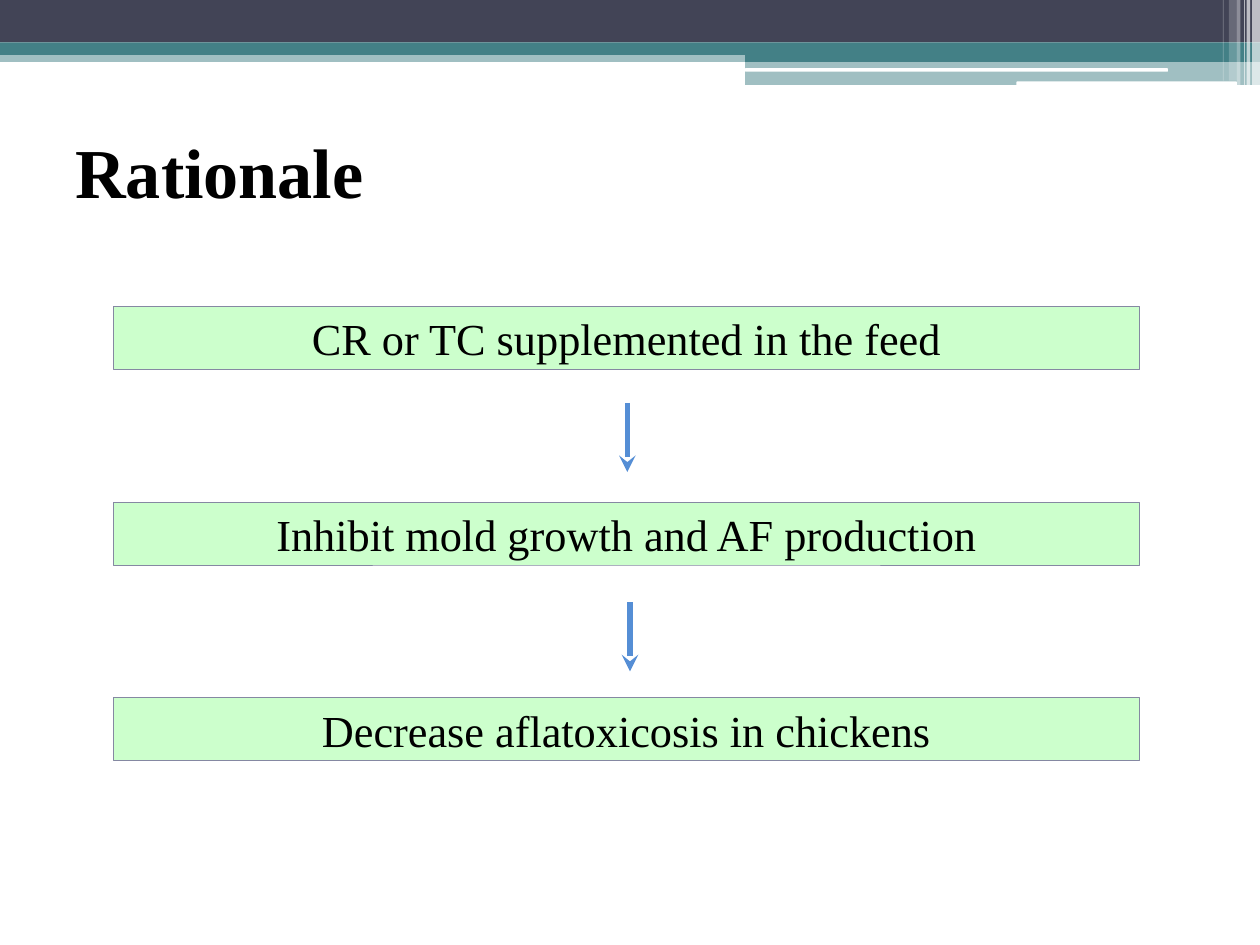
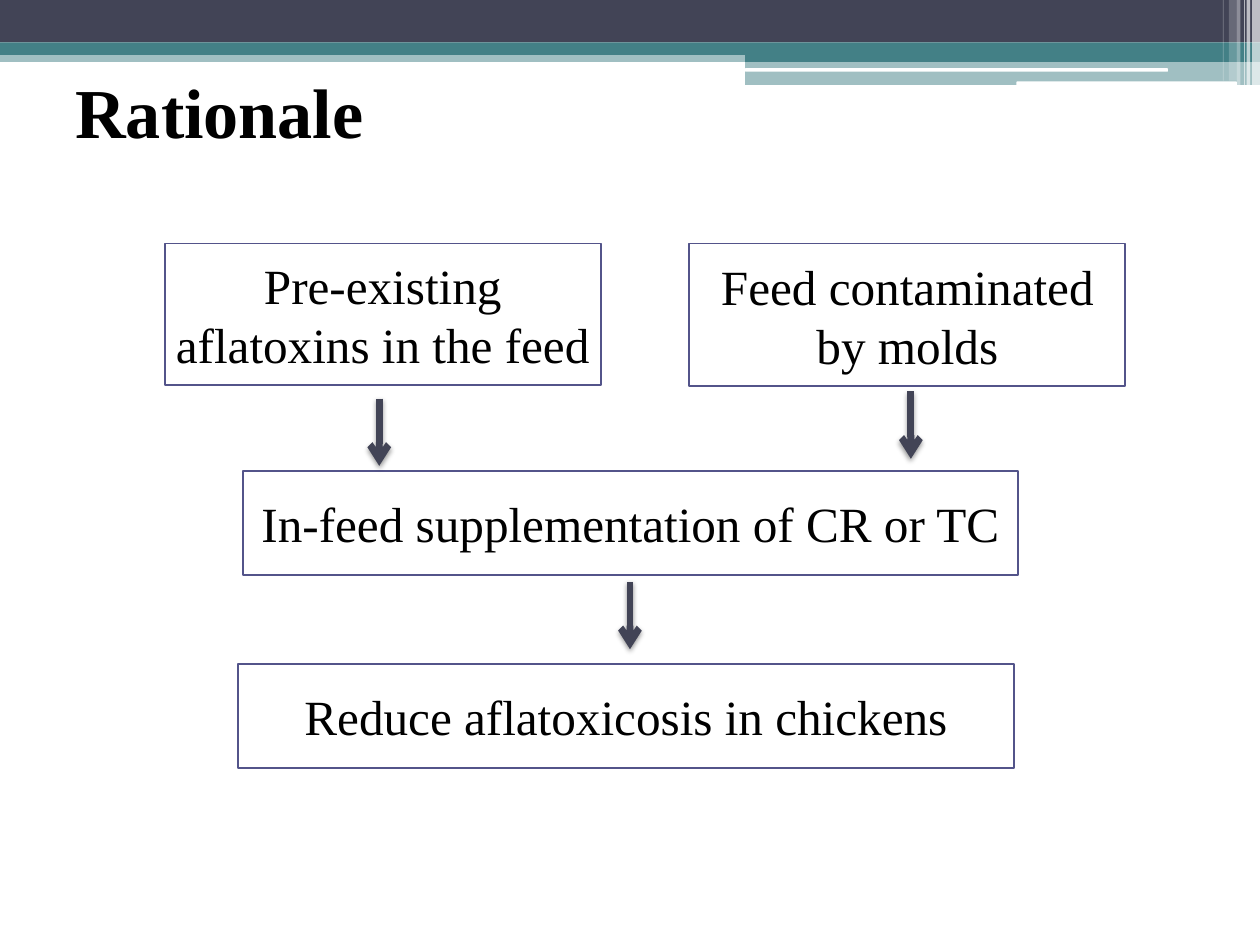
from lxml import etree
from pptx import Presentation
from pptx.dml.color import RGBColor
from pptx.enum.shapes import MSO_CONNECTOR, MSO_SHAPE
from pptx.enum.text import MSO_ANCHOR, MSO_AUTO_SIZE, PP_ALIGN
from pptx.oxml.ns import qn
from pptx.util import Inches, Pt

RECT, ROUND = MSO_SHAPE.RECTANGLE, MSO_SHAPE.ROUNDED_RECTANGLE
LINE = MSO_CONNECTOR.STRAIGHT
MIDDLE, NO_FIT = MSO_ANCHOR.MIDDLE, MSO_AUTO_SIZE.NONE
LEFT, CENTER = PP_ALIGN.LEFT, PP_ALIGN.CENTER

WHITE = RGBColor(0xFF, 0xFF, 0xFF)
BLACK = RGBColor(0, 0, 0)
DARK = RGBColor(0x42, 0x44, 0x56)
TEAL = RGBColor(0x43, 0x80, 0x86)
MINT = RGBColor(0xCC, 0xFF, 0xCC)
GREY = RGBColor(0x85, 0x88, 0xA2)
BLUE = RGBColor(0x55, 0x8E, 0xD5)
INDIGO = RGBColor(0x53, 0x54, 0x8A)

FONT = "Times New Roman"
WIDTH, HEIGHT = 14.22, 10.67
HALF = 8.41

BANDS = [
    (RECT, 0, 0.57, WIDTH, 0.13, TEAL, 50),
    (RECT, 0, 0, WIDTH, 0.48, DARK, 100),
    (RECT, 0, 0.48, WIDTH, 0.14, TEAL, 100),
    (RECT, HALF, 0.56, WIDTH - HALF, 0.14, TEAL, 100),
    (RECT, HALF, 0.68, WIDTH - HALF, 0.28, TEAL, 50),
    (ROUND, HALF, 0.77, 4.77, 0.04, WHITE, 100),
    (ROUND, 11.47, 0.92, 2.49, 0.06, WHITE, 100),
]
STRIPES = [
    (14.13, 0.09, 0.97, 65),
    (14.07, 0.04, 0.97, 65),
    (14.04, 0.01, 0.97, 60),
    (13.96, 0.04, 0.97, 40),
    (13.87, 0.09, 0.91, 20),
    (13.8, 0.01, 0.91, 30),
]


def add_sub(node, tag, **attrs):
    """Append a DrawingML child with the given attributes."""
    return etree.SubElement(node, qn(tag), **attrs)


def add_shape(slide, kind, x, y, w, h, color):
    """Add a flat filled shape without shadow."""
    shape = slide.shapes.add_shape(kind, Inches(x), Inches(y), Inches(w), Inches(h))
    shape.shadow.inherit = False
    shape.fill.solid()
    shape.fill.fore_color.rgb = color
    return shape


def add_bands(slide):
    """Build the top bands and place them behind everything in the layout."""
    tree = slide.slide_layout.shapes.element
    strips = [(RECT, x, 0, w, h, WHITE, alpha) for x, w, h, alpha in STRIPES]
    for i, (*place, alpha) in enumerate(BANDS + strips):
        band = add_shape(slide, *place)
        band.line.fill.background()
        if alpha < 100:
            color = band.element.xpath("./p:spPr/a:solidFill/a:srgbClr")[0]
            add_sub(color, "a:alpha", val=str(alpha * 1000))
        band.element.xpath("./p:nvSpPr/p:cNvPr")[0].set("id", str(100 + i))
        tree.insert(2 + i, band.element)


def set_text(frame, text, size, align, bold=False):
    """Write one paragraph in the deck's type style."""
    frame.text = text
    frame.word_wrap = True
    frame.auto_size = NO_FIT
    frame.vertical_anchor = MIDDLE
    para = frame.paragraphs[0]
    para.alignment = align
    font = para.font
    font.name, font.size, font.bold = FONT, Pt(size), bold
    font.color.rgb = BLACK


def add_title(slide, text, y):
    """Place and style the title placeholder."""
    title = slide.shapes.title
    title.left, title.top = Inches(0.71), Inches(y)
    title.width, title.height = Inches(12.8), Inches(1.66)
    frame = title.text_frame
    frame.margin_left = frame.margin_right = Inches(0.14)
    frame.margin_top = frame.margin_bottom = Inches(0.07)
    set_text(frame, text, 57, LEFT, True)


def add_box(slide, text, x, y, w, h, fill, edge, weight, size):
    """Add an outlined box with centred text."""
    box = add_shape(slide, RECT, x, y, w, h, fill)
    box.line.color.rgb = edge
    box.line.width = Pt(weight)
    set_text(box.text_frame, text, size, CENTER)


def add_arrow(slide, x, y, length, color, weight, head, shade=False):
    """Add a downward arrow, with a soft shadow on request."""
    arrow = slide.shapes.add_connector(
        LINE, Inches(x), Inches(y), Inches(x), Inches(y + length))
    arrow.line.color.rgb = color
    arrow.line.width = Pt(weight)
    props = arrow.element.spPr
    add_sub(props.find(qn("a:ln")), "a:tailEnd", type=head)
    effects = add_sub(props, "a:effectLst")
    if shade:
        shadow = add_sub(effects, "a:outerShdw", blurRad=str(Pt(4.1)),
                         dist=str(Pt(2)), dir="5400000", rotWithShape="0")
        tint = add_sub(shadow, "a:srgbClr", val=str(BLACK))
        add_sub(tint, "a:alpha", val="40000")


def add_steps(slide, x, y, w):
    """Stack the three green steps with arrows between them."""
    steps = ["CR or TC supplemented in the feed",
             "Inhibit mold growth and AF production",
             "Decrease aflatoxicosis in chickens"]
    pitch = 2.21
    for i, text in enumerate(steps):
        add_box(slide, text, x, y + i * pitch, w, 0.71, MINT, GREY, 0.75, 36)
    for dx, dy in [(5.8, 1.09), (5.83, 3.34)]:
        add_arrow(slide, x + dx, y + dy, 0.78, BLUE, 4.5, "stealth")


def add_flow(slide, x, y):
    """Lead two causes into the treatment and its effect."""
    boxes = [
        ("Pre-existing aflatoxins in the feed", 0, 0, 4.92, 1.6),
        ("Feed contaminated by molds", 5.92, 0, 4.92, 1.61),
        ("In-feed supplementation of CR or TC", 0.88, 2.57, 8.75, 1.17),
        ("Reduce aflatoxicosis in chickens", 0.83, 4.75, 8.75, 1.17),
    ]
    for text, dx, dy, w, h in boxes:
        add_box(slide, text, x + dx, y + dy, w, h, WHITE, INDIGO, 1.5, 40)
    for dx, dy in [(2.42, 1.75), (8.42, 1.67), (5.25, 3.82)]:
        add_arrow(slide, x + dx, y + dy, 0.76, DARK, 5.5, "arrow", True)


def main():
    """Build and save the deck."""
    deck = Presentation()
    deck.slide_width, deck.slide_height = Inches(WIDTH), Inches(HEIGHT)
    layout = deck.slide_layouts[5]
    steps, flow = [deck.slides.add_slide(layout) for _ in range(2)]
    add_bands(steps)
    add_title(steps, "Rationale", 1.09)
    add_steps(steps, 1.28, 3.46, 11.58)
    add_title(flow, "Rationale", 0.42)
    add_flow(flow, 1.86, 2.75)
    deck.save("out.pptx")


if __name__ == "__main__":
    main()
